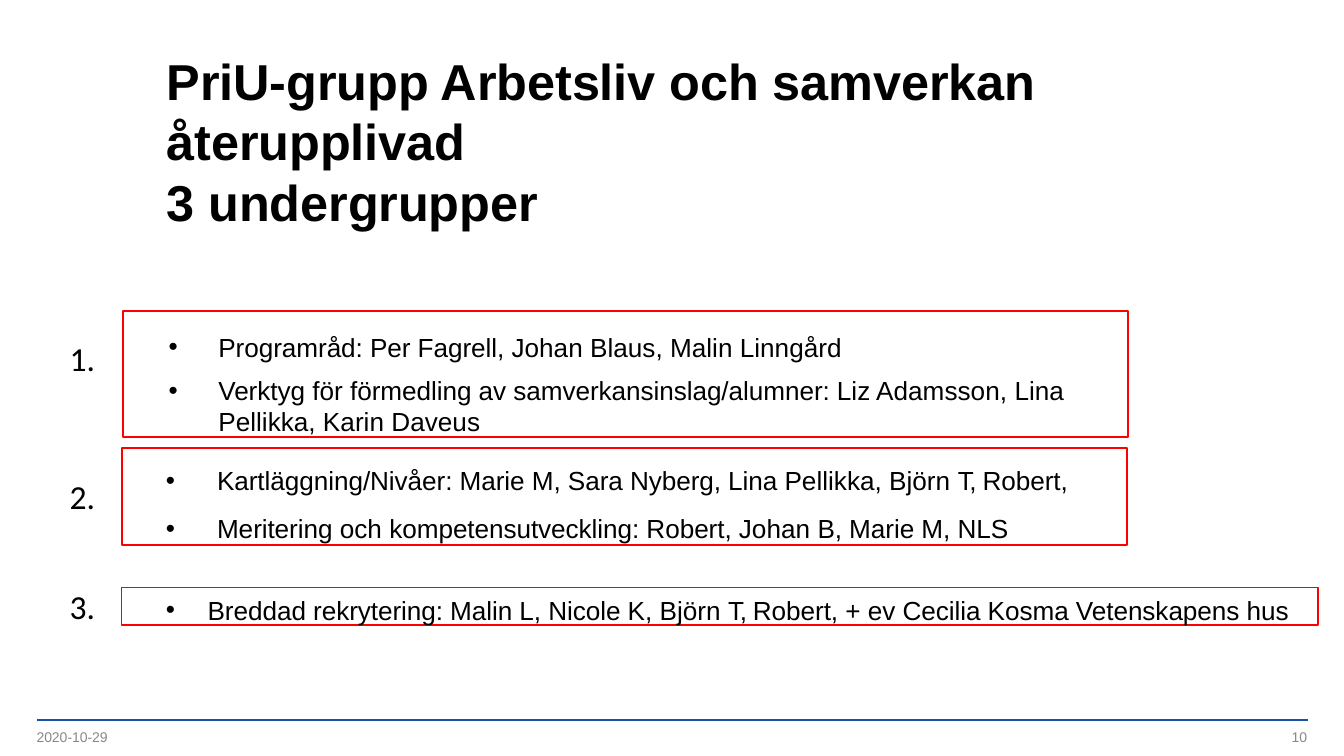
"""Build a slide with a heading and three numbered, framed subgroups."""
from dataclasses import dataclass
from typing import NamedTuple

from lxml.etree import SubElement
from pptx import Presentation
from pptx.dml.color import RGBColor
from pptx.enum.shapes import MSO_CONNECTOR as Connector, MSO_SHAPE as Shape
from pptx.enum.text import MSO_ANCHOR as Anchor
from pptx.oxml.ns import qn
from pptx.util import Inches, Pt


@dataclass(frozen=True)
class Theme:
    sans: str = "Arial"
    number_face: str = "Calibri"
    ink: RGBColor = RGBColor(0, 0, 0)
    muted: RGBColor = RGBColor(0x88, 0x88, 0x88)
    frame: RGBColor = RGBColor(0xFF, 0, 0)
    rule: RGBColor = RGBColor(0x18, 0x53, 0xA6)
    title_size: float = 27
    body_size: float = 14
    number_size: float = 18
    footer_size: float = 7.5
    tracking: float = -0.05


class Place(NamedTuple):
    column: float
    row: float
    columns: float
    rows: float


class Span(NamedTuple):
    text: str
    tracking: float = 0


class Style(NamedTuple):
    face: str
    size: float
    color: RGBColor
    bold: bool = False


@dataclass(frozen=True)
class Group:
    place: Place
    number_row: float
    top_inset: float
    indent: float
    hanging: float
    gap: float
    bullets: tuple[tuple[Span, ...], ...]


THEME = Theme()
COLUMNS, ROWS = 100, 56.25
CELL = Inches(10) / COLUMNS
TITLE = Style(THEME.sans, THEME.title_size, THEME.ink, True)
BODY = Style(THEME.sans, THEME.body_size, THEME.ink)
NUMBER = Style(THEME.number_face, THEME.number_size, THEME.ink)
FOOTER = Style(THEME.sans, THEME.footer_size, THEME.muted)


def cells(count: float) -> int:
    """Convert grid cells to a length."""
    return round(count * CELL)


def tight(text: str) -> Span:
    """Return text with the slide's slightly narrowed tracking."""
    return Span(text, THEME.tracking)


GROUPS = (
    Group(Place(9.15, 23.15, 74.8, 9.4), 24.65, 1.5, 7.1, 3.7, 6.3, (
        (tight("Programråd: Per Fagrell, "), Span("Johan Blaus, Malin Linngård")),
        (tight("Verktyg "), Span("för "), tight("förmedling av samverkansinslag/alumner: "),
         Span("Liz Adamsson, "), tight("Lina "), Span("Pellikka, Karin Daveus")),
    )),
    Group(Place(9.05, 33.35, 74.8, 7.2), 34.9, 1.2, 7.1, 3.8, 9, (
        (tight("Kartläggning/Nivåer: Marie M, Sara Nyberg, Lina "), Span("Pellikka, Björn "),
         Span("T, ", -0.8), tight("Robert,")),
        (tight("Meritering "), Span("och "), tight("kompetensutveckling: Robert, "),
         Span("Johan "), tight("B, Marie M, NLS")),
    )),
    Group(Place(9.05, 43.72, 89, 2.8), 43.1, 0.5, 6.4, 3.1, 0, (
        (tight("Breddad rekrytering: Malin L, Nicole "), Span("K, Björn "), Span("T, ", -0.8),
         tight("Robert, "), Span("+ "), tight("ev Cecilia Kosma Vetenskapens hus")),
    )),
)


def prepare_frame(frame, left: float = 0, top: float = 0) -> None:
    """Wrap a text frame, anchor it at the top and set its insets."""
    frame.word_wrap = True
    frame.vertical_anchor = Anchor.TOP
    frame.margin_left, frame.margin_top = cells(left), cells(top)
    frame.margin_right, frame.margin_bottom = cells(left), 0


def style_paragraph(paragraph, style: Style) -> None:
    """Apply one type style to a paragraph."""
    font = paragraph.font
    font.name, font.size, font.bold = style.face, Pt(style.size), style.bold
    font.color.rgb = style.color


def add_spans(paragraph, spans: tuple[Span, ...]) -> None:
    """Append runs with their own letter spacing."""
    for span in spans:
        run = paragraph.add_run()
        run.text = span.text
        run._r.get_or_add_rPr().set("spc", str(round(span.tracking * 100)))


def add_label(slide, place: Place, span: Span, style: Style,
              left: float = 0, top: float = 0) -> None:
    """Add a single-paragraph text box."""
    box = slide.shapes.add_textbox(*map(cells, place))
    prepare_frame(box.text_frame, left, top)
    paragraph = box.text_frame.paragraphs[0]
    for index, line in enumerate(span.text.split("\n")):
        if index:
            paragraph.add_line_break()
        add_spans(paragraph, (Span(line, span.tracking),))
    style_paragraph(paragraph, style)


def add_group(slide, number: int, group: Group) -> None:
    """Draw a framed bullet list with its number."""
    shape = slide.shapes.add_shape(Shape.RECTANGLE, *map(cells, group.place))
    shape.shadow.inherit = False
    shape.fill.background()
    shape.line.color.rgb = THEME.frame
    shape.line.width = Pt(0.96)
    frame = shape.text_frame
    prepare_frame(frame, top=group.top_inset)
    for index, spans in enumerate(group.bullets):
        paragraph = frame.add_paragraph() if index else frame.paragraphs[0]
        properties = paragraph._p.get_or_add_pPr()
        properties.set("algn", "l")
        properties.set("marL", str(cells(group.indent)))
        properties.set("indent", str(-cells(group.hanging)))
        SubElement(properties, qn("a:buFont"), typeface=THEME.sans)
        SubElement(properties, qn("a:buChar"), char="•")
        if index:
            paragraph.space_before = Pt(group.gap)
        add_spans(paragraph, spans)
        style_paragraph(paragraph, BODY)
    add_label(slide, Place(4.2, group.number_row, 4.2, 4), Span(f"{number}."), NUMBER, 1, 0.5)


def add_footer(slide) -> None:
    """Draw the footer rule, date and page number."""
    rule = slide.shapes.add_connector(
        Connector.STRAIGHT, cells(2.72), cells(53.55), cells(97.3), cells(53.55))
    rule.line.color.rgb = THEME.rule
    rule.line.width = Pt(1.08)
    SubElement(rule._element.spPr, qn("a:effectLst"))
    add_label(slide, Place(2.72, 54.2, 6, 1.5), tight("2020-10-29"), FOOTER)
    add_label(slide, Place(96.1, 54.2, 2, 1.5), Span("10"), FOOTER)


def main() -> None:
    """Build and save the presentation."""
    presentation = Presentation()
    presentation.slide_width, presentation.slide_height = cells(COLUMNS), cells(ROWS)
    slide = presentation.slides.add_slide(presentation.slide_layouts[6])
    add_footer(slide)
    add_label(slide, Place(12.4, 3.6, 72.5, 13.8),
              tight("PriU-grupp Arbetsliv och samverkan återupplivad\n3 undergrupper"),
              TITLE, top=0.1)
    for number, group in enumerate(GROUPS, start=1):
        add_group(slide, number, group)
    presentation.save("out.pptx")


if __name__ == "__main__":
    main()
